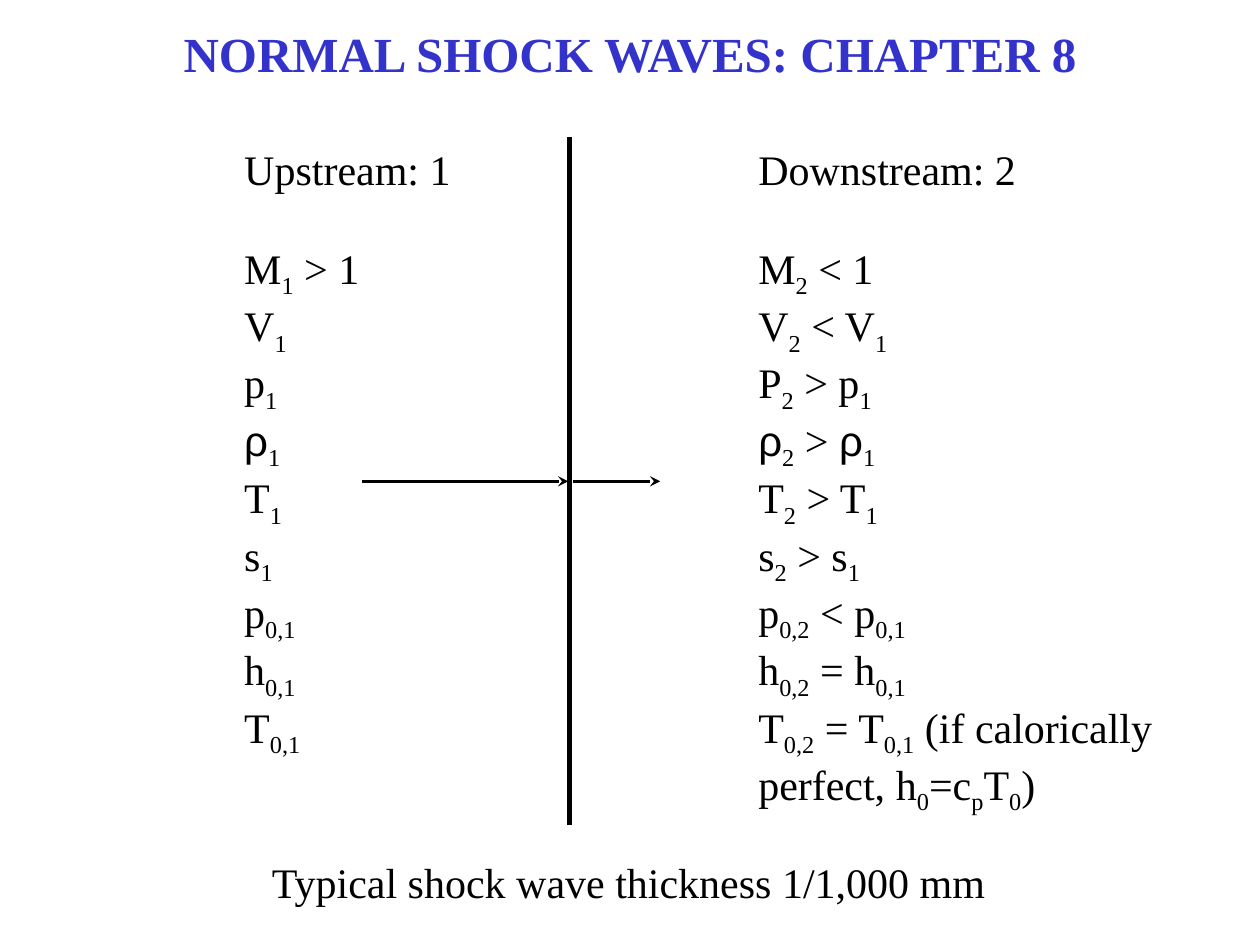
import pptx
import pptx.dml.color
import pptx.enum.shapes
import pptx.enum.text
import pptx.oxml.ns
import pptx.util
from lxml import etree
from pptx.util import Inches

BLACK = pptx.dml.color.RGBColor(0x00, 0x00, 0x00)
TITLE_BLUE = pptx.dml.color.RGBColor(0x33, 0x33, 0xCC)
SERIF = "Times New Roman"
GREEK = "Arial"

# Text between bars is subscript
UPSTREAM = ["Upstream: 1", "M|1| > 1", "V|1|", "p|1|", "ρ|1|", "T|1|",
            "s|1|", "p|0,1|", "h|0,1|", "T|0,1|"]
DOWNSTREAM = ["Downstream: 2", "M|2| < 1", "V|2| < V|1|", "P|2| > p|1|",
              "ρ|2| > ρ|1|", "T|2| > T|1|", "s|2| > s|1|",
              "p|0,2| < p|0,1|", "h|0,2| = h|0,1|",
              "T|0,2| = T|0,1| (if calorically perfect, h|0|=c|p|T|0|)"]


def style_font(font, size, color):
    font.name = SERIF
    font.size = pptx.util.Pt(size)
    font.color.rgb = color


def add_title(slide, text):
    title = slide.shapes.title
    title.left, title.top = Inches(0.21), Inches(0.17)
    title.width, title.height = Inches(9.58), Inches(0.5)
    title.text_frame.vertical_anchor = pptx.enum.text.MSO_ANCHOR.MIDDLE
    heading = title.text_frame.paragraphs[0]
    heading.text = text
    heading.alignment = pptx.enum.text.PP_ALIGN.CENTER
    style_font(heading.font, 28, TITLE_BLUE)
    heading.font.bold = True


def write_formula(paragraph, formula):
    """Add runs, lowering the text between bars and setting rho in Arial."""
    style_font(paragraph.font, 24, BLACK)
    for index, part in enumerate(formula.split("|")):
        for piece in filter(None, part.partition("ρ")):
            run = paragraph.add_run()
            run.text = piece
            if piece == "ρ":
                run.font.name = GREEK
            if index % 2:
                run.font._element.set("baseline", "-25000")


def add_text(slide, left, top, width, height, lines, wrap=True):
    frame = slide.shapes.add_textbox(
        Inches(left), Inches(top), Inches(width), Inches(height)).text_frame
    frame.word_wrap = wrap
    frame.auto_size = pptx.enum.text.MSO_AUTO_SIZE.SHAPE_TO_FIT_TEXT
    for index, line in enumerate(lines):
        paragraph = frame.add_paragraph() if index else frame.paragraphs[0]
        write_formula(paragraph, line)
    return frame


def add_state(slide, left, width, height, lines):
    frame = add_text(slide, left, 1.09, width, height, lines)
    # One line of space under the heading
    frame.paragraphs[0].space_after = pptx.util.Pt(27.6)


def add_line(slide, start, end, weight, arrow=False):
    line = slide.shapes.add_connector(
        pptx.enum.shapes.MSO_CONNECTOR.STRAIGHT,
        *(Inches(value) for value in start + end))
    line.line.color.rgb = BLACK
    line.line.width = pptx.util.Pt(weight)
    if arrow:
        etree.SubElement(line.line._get_or_add_ln(),
                         pptx.oxml.ns.qn("a:tailEnd"), type="stealth")
    etree.SubElement(line._element.spPr, pptx.oxml.ns.qn("a:effectLst"))


def main():
    deck = pptx.Presentation()
    deck.slide_width, deck.slide_height = Inches(10), Inches(7.5)
    slide = deck.slides.add_slide(deck.slide_layouts.get_by_name("Title Only"))

    add_title(slide, "NORMAL SHOCK WAVES: CHAPTER 8")

    # Shock front with the states on either side
    add_line(slide, (4.52, 1.09), (4.52, 6.55), 3)
    add_state(slide, 1.84, 1.93, 4.49, UPSTREAM)
    add_state(slide, 5.92, 3.84, 4.89, DOWNSTREAM)

    # Flow through the shock
    for start, end in ((2.87, 4.51), (4.55, 5.24)):
        add_line(slide, (start, 3.82), (end, 3.82), 1.5, arrow=True)

    add_text(slide, 2.06, 6.75, 5.88, 0.5,
             ["Typical shock wave thickness 1/1,000 mm"], wrap=False)

    deck.save("out.pptx")


if __name__ == "__main__":
    main()
